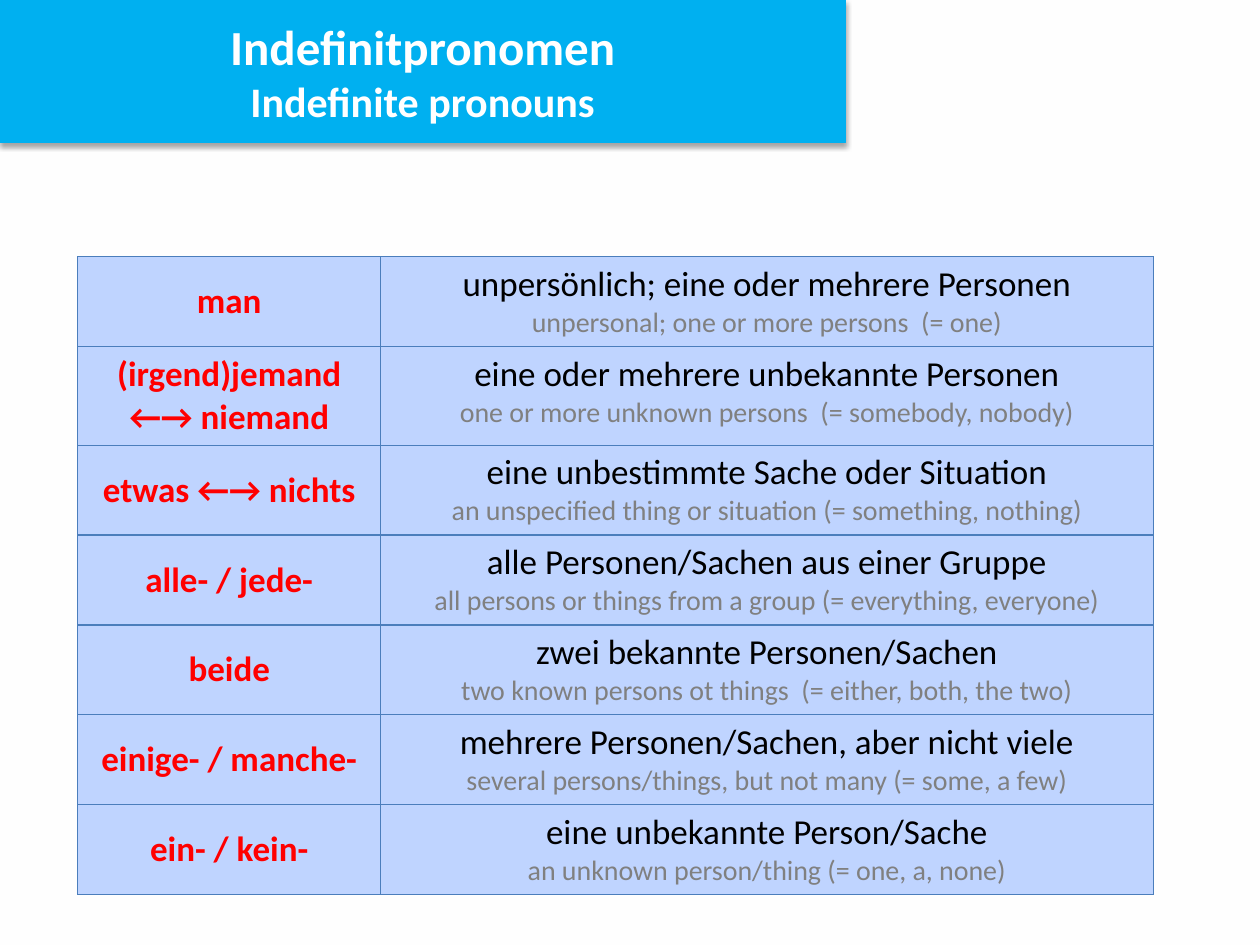
from dataclasses import dataclass

from lxml import etree
from pptx import Presentation
from pptx.dml.color import RGBColor
from pptx.enum import text
from pptx.oxml import parse_xml
from pptx.oxml.ns import nsdecls, qn
from pptx.util import Pt


@dataclass(frozen=True)
class Theme:
    font: str = "Calibri"
    background: str = "FEFEFE"
    banner: str = "00B0F0"
    cell: str = "BFD4FF"
    border: str = "4B7EBC"
    white: str = "FFFFFF"
    pronoun: str = "FF0000"
    german: str = "000000"
    english: str = "808080"
    title_size: int = 28
    subtitle_size: int = 24
    text_size: int = 20
    gloss_size: int = 16
    line: float = 0.75


ROWS = [
    ("man", "unpersönlich; eine oder mehrere Personen",
     "unpersonal; one or more persons  (= one)"),
    ("(irgend)jemand ←→ niemand", "eine oder mehrere unbekannte Personen",
     "one or more unknown persons  (= somebody, nobody)"),
    ("etwas ←→ nichts", "eine unbestimmte Sache oder Situation",
     "an unspecified thing or situation (= something, nothing)"),
    ("alle- / jede-", "alle Personen/Sachen aus einer Gruppe",
     "all persons or things from a group (= everything, everyone)"),
    ("beide", "zwei bekannte Personen/Sachen",
     "two known persons ot things  (= either, both, the two)"),
    ("einige- / manche-", "mehrere Personen/Sachen, aber nicht viele",
     "several persons/things, but not many (= some, a few)"),
    ("ein- / kein-", "eine unbekannte Person/Sache",
     "an unknown person/thing (= one, a, none)"),
]


class SlideBuilder:
    def __init__(self, s, theme):
        self.s, self.theme = s, theme
        self.fill(s.background, theme.background)

    def fill(self, target, color):
        target.fill.solid()
        target.fill.fore_color.rgb = RGBColor.from_string(color)

    def add_lines(self, tf, lines):
        """Add one centred paragraph per (text, size, colour, bold) line."""
        for i, (words, size, color, bold) in enumerate(lines):
            p = tf.add_paragraph() if i else tf.paragraphs[0]
            p.alignment = text.PP_ALIGN.CENTER
            r = p.add_run()
            r.text = words
            font = {"name": self.theme.font, "size": Pt(size), "bold": bold}
            for name, value in font.items():
                setattr(r.font, name, value)
            r.font.color.rgb = RGBColor.from_string(color)

    def banner(self, title, subtitle, width, height):
        t, sp = self.theme, self.s.shapes.title
        box = {"left": 0, "top": 0, "width": Pt(width), "height": Pt(height)}
        for name, value in box.items():
            setattr(sp, name, value)
        self.fill(sp, t.banner)
        sp.line.color.rgb = RGBColor.from_string(t.banner)
        sp.line.width = Pt(t.line)
        sp._element.spPr.append(parse_xml(
            f'<a:effectLst {nsdecls("a")}>'
            f'<a:outerShdw blurRad="{Pt(3.1)}" dist="{Pt(1.8)}" dir="5400000" rotWithShape="0">'
            '<a:srgbClr val="000000"><a:alpha val="35000"/></a:srgbClr>'
            '</a:outerShdw></a:effectLst>'))
        tf = sp.text_frame
        frame = {"word_wrap": True, "auto_size": text.MSO_AUTO_SIZE.NONE,
                 "vertical_anchor": text.MSO_ANCHOR.MIDDLE}
        for name, value in frame.items():
            setattr(tf, name, value)
        self.add_lines(tf, [(title, t.title_size, t.white, True),
                            (subtitle, t.subtitle_size, t.white, True)])

    def borders(self, cell):
        tcPr = cell._tc.get_or_add_tcPr()
        for i, side in enumerate(("lnL", "lnR", "lnT", "lnB")):
            ln = etree.Element(qn(f"a:{side}"), w=str(Pt(self.theme.line)))
            solid = etree.SubElement(ln, qn("a:solidFill"))
            etree.SubElement(solid, qn("a:srgbClr"), val=self.theme.border)
            tcPr.insert(i, ln)

    def cell(self, cell, lines, anchor):
        self.fill(cell, self.theme.cell)
        self.borders(cell)
        cell.vertical_anchor = anchor
        self.add_lines(cell.text_frame, lines)

    def pronoun_table(self, rows, left, top, widths, heights):
        t = self.theme
        table = self.s.shapes.add_table(
            len(rows), len(widths), Pt(left), Pt(top),
            Pt(sum(widths)), Pt(sum(heights))).table
        table.first_row = table.horz_banding = False
        for column, width in zip(table.columns, widths):
            column.width = Pt(width)
        for i, (pronoun, german, english) in enumerate(rows):
            table.rows[i].height = Pt(heights[i])
            self.cell(table.cell(i, 0), [(pronoun, t.text_size, t.pronoun, True)],
                      text.MSO_ANCHOR.MIDDLE)
            self.cell(table.cell(i, 1), [(german, t.text_size, t.german, False),
                                         (english, t.gloss_size, t.english, False)],
                      text.MSO_ANCHOR.TOP)


def main():
    prs = Presentation()
    prs.slide_width, prs.slide_height = Pt(720), Pt(540)
    title_only = prs.slide_layouts[5]
    slide = SlideBuilder(prs.slides.add_slide(title_only), Theme())
    slide.banner("Indefinitpronomen", "Indefinite pronouns", 483, 81.5)
    heights = [56 if "jemand" in row[0] else 51.4 for row in ROWS]
    slide.pronoun_table(ROWS, 44.5, 146.75, (173, 441.5), heights)
    prs.save("out.pptx")


if __name__ == "__main__":
    main()
